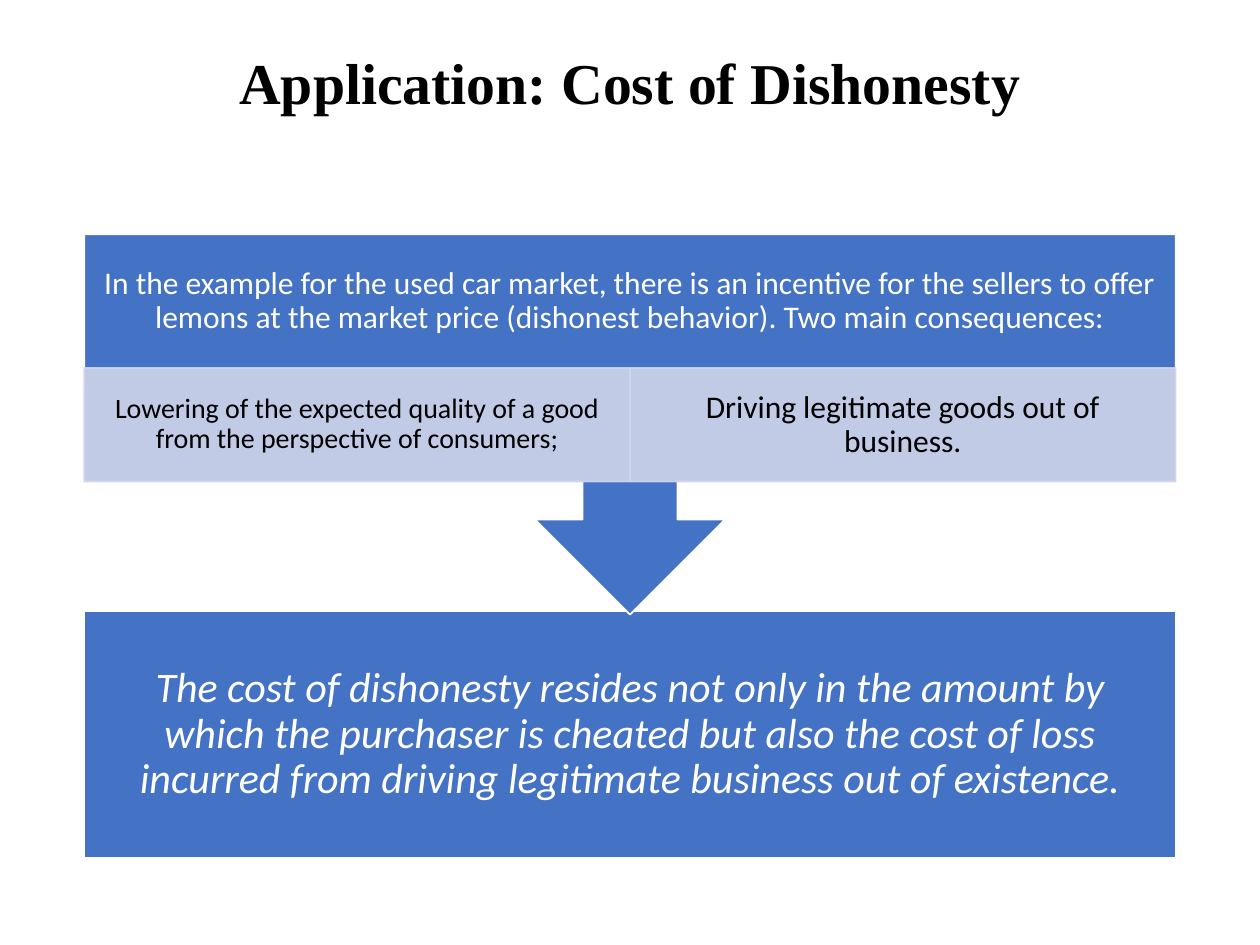
"""Build a slide on the cost of dishonesty as a two-step process."""
from lxml.etree import SubElement
from pptx import Presentation
from pptx.dml.color import RGBColor
from pptx.enum.shapes import MSO_SHAPE
from pptx.enum.text import MSO_ANCHOR, PP_ALIGN
from pptx.oxml.ns import qn
from pptx.util import Cm, Pt

HUES = {"blue": "4472C4", "pale": "CFD5EA", "white": "FFFFFF", "black": "000000"}
LEFT, WIDE = 1.7, 22
HALF = WIDE / 2


def paint(shape, fill, edge):
    shape.shadow.inherit = False
    shape.fill.solid()
    shape.fill.fore_color.rgb = RGBColor.from_string(HUES[fill])
    shape.line.color.rgb = RGBColor.from_string(HUES[edge])
    shape.line.width = Pt(1)


def write(shape, text, hue, pads, space=0.9, anchor=MSO_ANCHOR.MIDDLE, **font):
    frame = shape.text_frame
    side, end = (Cm(pad) for pad in pads)
    form = {"word_wrap": True, "vertical_anchor": anchor, "margin_left": side,
            "margin_right": side, "margin_top": end, "margin_bottom": end}
    for key, value in form.items():
        setattr(frame, key, value)
    para = frame.paragraphs[0]
    para.alignment, para.line_spacing = PP_ALIGN.CENTER, space
    run = para.add_run()
    run.text = text
    for key, value in font.items():
        setattr(run.font, key, value)
    run.font.color.rgb = RGBColor.from_string(HUES[hue])


deck = Presentation()
deck.slide_width, deck.slide_height = Cm(25.4), Cm(19.05)
slide = deck.slides.add_slide(deck.slide_layouts[6])
shapes = slide.shapes

cost = shapes.add_shape(MSO_SHAPE.RECTANGLE, Cm(LEFT), Cm(12.32), Cm(WIDE), Cm(4.98))
paint(cost, "blue", "white")
write(cost, "The cost of dishonesty resides not only in the amount by which the purchaser "
      "is cheated but also the cost of loss incurred from driving legitimate business "
      "out of existence.", "white", (0.48, 0.48),
      name="Calibri", size=Pt(24), italic=True)

arrow = shapes.add_shape(MSO_SHAPE.UP_ARROW_CALLOUT, Cm(LEFT), Cm(4.72), Cm(WIDE), Cm(7.67))
arrow.rotation = 180
paint(arrow, "blue", "white")

lead = shapes.add_textbox(Cm(LEFT), Cm(4.72), Cm(WIDE), Cm(2.7))
write(lead, "In the example for the used car market, there is an incentive for the sellers "
      "to offer lemons at the market price (dishonest behavior). Two main consequences:",
      "white", (0.36, 0.36), name="Calibri", size=Pt(18))

effects = [
    ("Lowering of the expected quality of a good from the perspective of consumers;",
     16, (0.32, 0.05)),
    ("Driving legitimate goods out of business.", 18, (0.36, 0.06)),
]
for index, (text, size, pads) in enumerate(effects):
    box = shapes.add_shape(MSO_SHAPE.RECTANGLE, Cm(LEFT + index * HALF), Cm(7.42),
                           Cm(HALF), Cm(2.29))
    paint(box, "pale", "pale")
    for tint in box._element.spPr.iter(qn("a:srgbClr")):
        SubElement(tint, qn("a:alpha"), val="90000")
    write(box, text, "black", pads, name="Calibri", size=Pt(size))

title = shapes.add_textbox(Cm(0), Cm(0.71), Cm(25.4), Cm(1.75))
write(title, "Application: Cost of Dishonesty", "black", (0.25, 0.13), 0.8,
      MSO_ANCHOR.BOTTOM, name="Times New Roman", size=Pt(33), bold=True)

deck.save("out.pptx")
